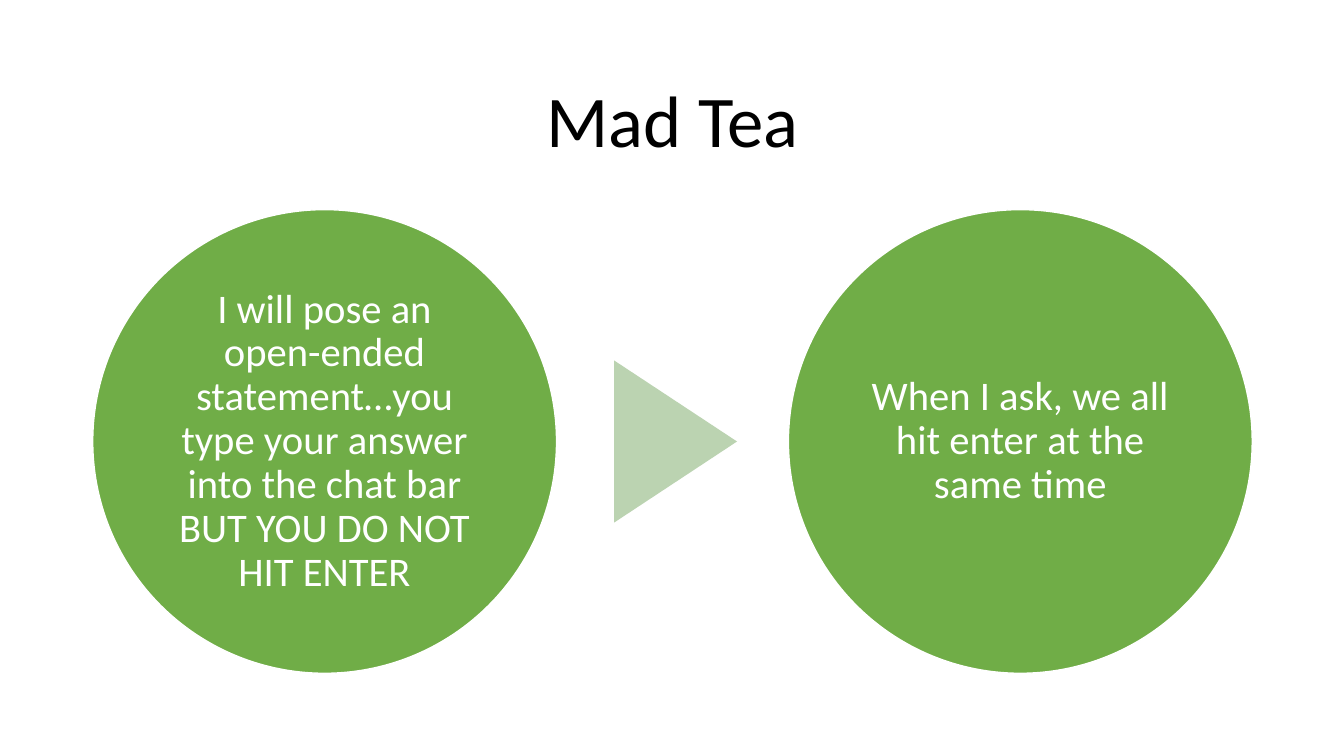
"""Build the Mad Tea slide: two step circles joined by a triangle."""
from pptx import Presentation
from pptx.dml.color import RGBColor
from pptx.enum.shapes import MSO_SHAPE as Preset
from pptx.enum.text import MSO_ANCHOR as Anchor, PP_ALIGN as Align
from pptx.util import Inches, Pt

TITLE = "Mad Tea"
STEPS = [
    "I will pose an open-ended statement…you type your answer into the chat bar "
    "BUT YOU DO NOT HIT ENTER",
    "When I ask, we all hit enter at the same time",
]

BLACK = RGBColor(0x00, 0x00, 0x00)
WHITE = RGBColor(0xFF, 0xFF, 0xFF)
GREEN = RGBColor(0x70, 0xAD, 0x47)
PALE_GREEN = RGBColor(0xBB, 0xD3, 0xB1)

SLIDE_WIDTH, SLIDE_HEIGHT = 13.33, 7.5
MARGIN = 0.92
CIRCLE_TOP, DIAMETER, STEP_PITCH = 2.08, 4.6, 6.9
TRIANGLE_WIDTH, TRIANGLE_HEIGHT = 1.61, 1.22

TITLE_FONT = {"name": "Calibri", "size": Pt(52)}
STEP_FONT = {"name": "Calibri", "size": Pt(29)}


def write(shape, text, font_format, color, inset):
    frame = shape.text_frame
    frame_format = {"word_wrap": True, "vertical_anchor": Anchor.MIDDLE}
    for side in ("left", "right", "top", "bottom"):
        frame_format[f"margin_{side}"] = Inches(inset)
    for name, value in frame_format.items():
        setattr(frame, name, value)
    paragraph = frame.paragraphs[0]
    paragraph.text = text
    paragraph.alignment = Align.CENTER
    paragraph.line_spacing = 0.9
    for name, value in font_format.items():
        setattr(paragraph.font, name, value)
    paragraph.font.color.rgb = color


def add_filled(slide, preset, left, top, width, height, color):
    shape = slide.shapes.add_shape(
        preset, Inches(left), Inches(top), Inches(width), Inches(height))
    shape.shadow.inherit = False
    shape.fill.solid()
    shape.fill.fore_color.rgb = color
    shape.line.fill.background()
    return shape


def main():
    presentation = Presentation()
    presentation.slide_width = Inches(SLIDE_WIDTH)
    presentation.slide_height = Inches(SLIDE_HEIGHT)
    slide = presentation.slides.add_slide(presentation.slide_layouts[6])

    title = slide.shapes.add_textbox(
        Inches(MARGIN), Inches(0.61), Inches(11.5), Inches(1.24))
    write(title, TITLE, TITLE_FONT, BLACK, 0.05)

    for index, step in enumerate(STEPS):
        left = MARGIN + index * STEP_PITCH
        circle = add_filled(
            slide, Preset.OVAL, left, CIRCLE_TOP, DIAMETER, DIAMETER, GREEN)
        circle.line.color.rgb = WHITE
        circle.line.width = Pt(1)
        write(circle, step, STEP_FONT, WHITE, 0.04)
        if index:
            center_x = left - STEP_PITCH / 2 + DIAMETER / 2 + 0.03
            center_y = CIRCLE_TOP + DIAMETER / 2
            triangle = add_filled(
                slide, Preset.ISOSCELES_TRIANGLE,
                center_x - TRIANGLE_WIDTH / 2, center_y - TRIANGLE_HEIGHT / 2,
                TRIANGLE_WIDTH, TRIANGLE_HEIGHT, PALE_GREEN)
            triangle.rotation = 90

    presentation.save("out.pptx")


if __name__ == "__main__":
    main()
